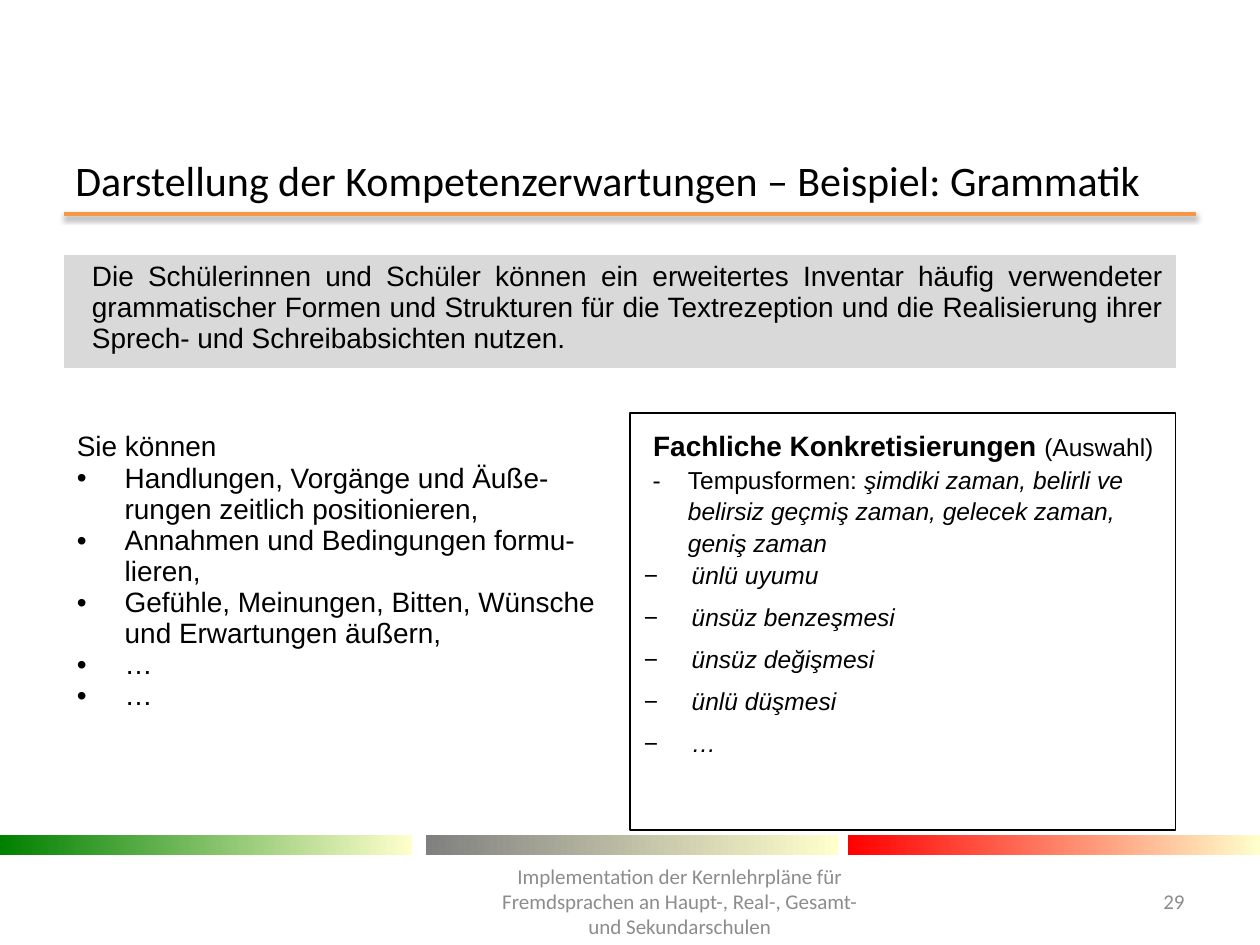
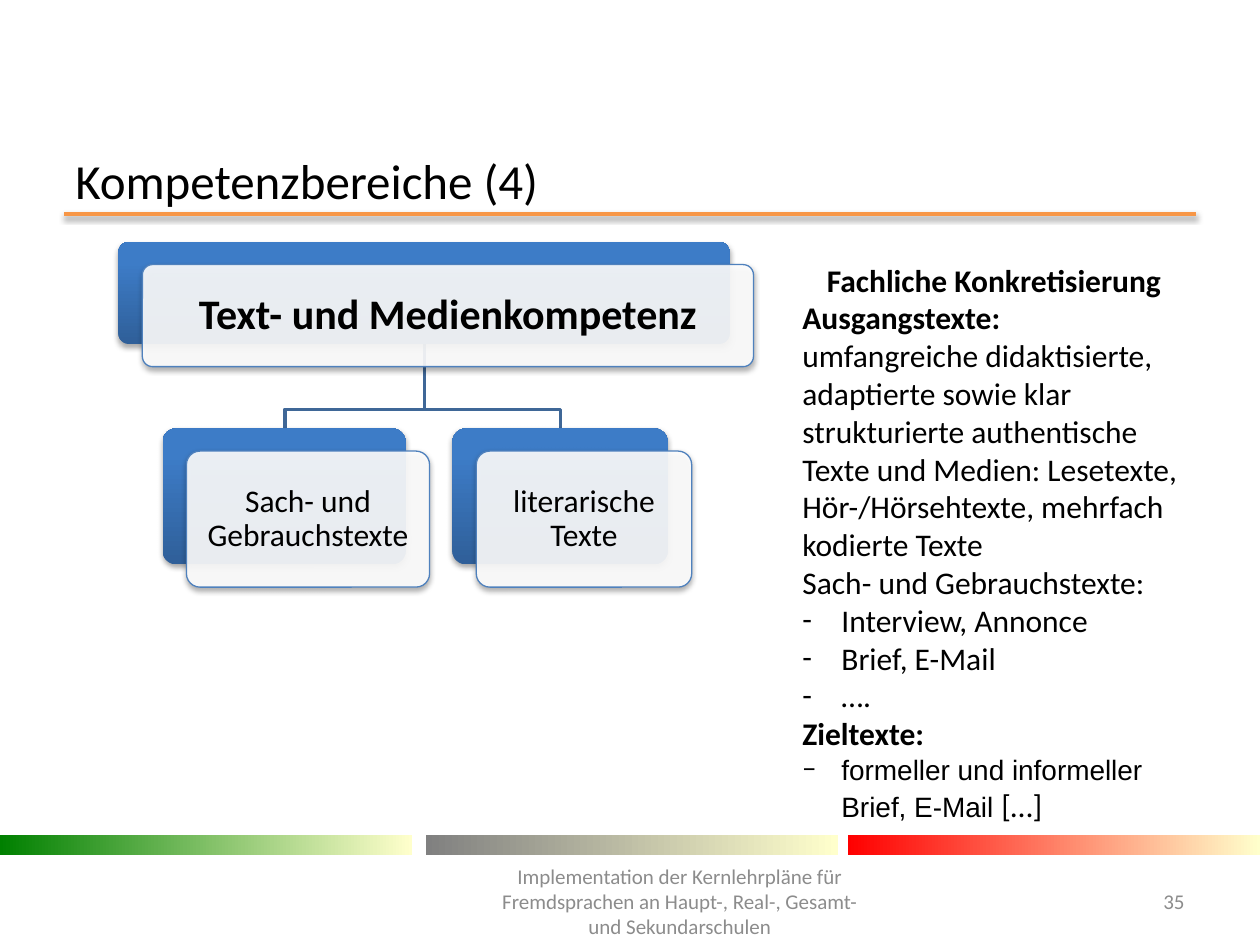
from lxml.etree import SubElement
from pptx import Presentation
from pptx.dml.color import RGBColor
from pptx.enum.shapes import MSO_CONNECTOR, MSO_SHAPE
from pptx.enum.text import MSO_ANCHOR, PP_ALIGN
from pptx.oxml.ns import qn
from pptx.util import Emu, Pt

PX = 9144  # 100 px to the inch
BLACK, WHITE, GREY = "000000", "FFFFFF", "8C8C8C"
ORANGE, CELL_GREY = "F79646", "D9D9D9"
NODE_DARK, NODE_LIGHT, NODE_EDGE, BRANCH = "2F5F99", "3D7CC7", "4F81BD", "3F6797"
BANDS = [(0, "008000"), (338, "808080"), (673, "FF0000")]
BAND_END = "FFFFCC"
NO_GRID_STYLE = "{2D5ABB26-0587-4C30-8999-92F81FD0307C}"
FOOTER = ("Implementation der Kernlehrpläne für Fremdsprachen an "
          "Haupt-, Real-, Gesamt- und Sekundarschulen")
LEFT, CENTER = PP_ALIGN.LEFT, PP_ALIGN.CENTER
RIGHT, JUSTIFY = PP_ALIGN.RIGHT, PP_ALIGN.JUSTIFY
MIDDLE, TOP = MSO_ANCHOR.MIDDLE, MSO_ANCHOR.TOP


def px(*values):
    return [Emu(v * PX) for v in values]


def rgb(code):
    return RGBColor.from_string(code)


def put(obj, **fmt):
    for name, value in fmt.items():
        setattr(obj, name, value)


def para(*runs, bullet=None, indent=(0, 0), **fmt):
    """Describe a paragraph; each run is a text or a (text, font dict) pair."""
    pairs = [(r, {}) if isinstance(r, str) else r for r in runs]
    return pairs, bullet, indent, fmt


class Deck:
    def __init__(self):
        self.prs = Presentation()
        put(self.prs, slide_width=Emu(1000 * PX), slide_height=Emu(750 * PX))
        self.s = None

    def slide(self, title, size, number):
        self.s = self.prs.slides.add_slide(self.prs.slide_layouts[6])
        self.line(51, 170, 949, 170, ORANGE, 2, shadow=38)
        for x, color in BANDS:
            self.shape((x, 663, 327, 16), gradient=(color, BAND_END, 1, 0))
        self.text((50, 123, 900, 39), [para(title)], anchor=MIDDLE, size=size)
        small = dict(anchor=MIDDLE, size=12, color=GREY)
        self.text((382, 695, 315, 40), [para(FOOTER, alignment=CENTER)], **small)
        self.text((886, 695, 64, 40), [para(number, alignment=RIGHT)], **small)

    def effects(self, sp, shadow):
        """Replace the theme effects by a soft shadow of that opacity, or by none."""
        effects = SubElement(sp._element.spPr, qn("a:effectLst"))
        if shadow:
            outer = SubElement(effects, qn("a:outerShdw"), blurRad="40000",
                               dist="21000", dir="5400000", rotWithShape="0")
            color = SubElement(outer, qn("a:srgbClr"), val=BLACK)
            SubElement(color, qn("a:alpha"), val=str(shadow * 1000))

    def stroke(self, sp, color, width):
        if color:
            sp.line.color.rgb = rgb(color)
            sp.line.width = Pt(width)
        else:
            sp.line.fill.background()

    def line(self, x1, y1, x2, y2, color, width, shadow=None):
        c = self.s.shapes.add_connector(MSO_CONNECTOR.STRAIGHT, *px(x1, y1, x2, y2))
        self.stroke(c, color, width)
        self.effects(c, shadow)

    def branch(self, points):
        pts = [px(*point) for point in points]
        builder = self.s.shapes.build_freeform(*pts[0])
        builder.add_line_segments(pts[1:], close=False)
        sp = builder.convert_to_shape()
        sp.fill.background()
        self.stroke(sp, BRANCH, 2)
        self.effects(sp, None)

    def shape(self, box, kind=MSO_SHAPE.RECTANGLE, fill=None, opacity=100,
              gradient=None, edge=None, width=1, shadow=None):
        """Gradient is (start colour, end colour, end position, angle)."""
        sp = self.s.shapes.add_shape(kind, *px(*box))
        if kind == MSO_SHAPE.ROUNDED_RECTANGLE:
            sp.adjustments[0] = 0.1
        if gradient:
            start, end, position, angle = gradient
            sp.fill.gradient()
            sp.fill.gradient_angle = angle
            for stop, color, at in zip(sp.fill.gradient_stops, (start, end), (0, position)):
                stop.color.rgb = rgb(color)
                stop.position = at
        elif fill:
            sp.fill.solid()
            sp.fill.fore_color.rgb = rgb(fill)
            if opacity < 100:
                color = sp._element.spPr.find(".//" + qn("a:srgbClr"))
                SubElement(color, qn("a:alpha"), val=str(opacity * 1000))
        else:
            sp.fill.background()
        self.stroke(sp, edge, width)
        self.effects(sp, shadow)
        return sp

    def node(self, x, y, w, h, label, size, bold=False):
        """Draw a blue card with a pale labelled card shifted over it."""
        rounded = MSO_SHAPE.ROUNDED_RECTANGLE
        self.shape((x, y, w, h), rounded, shadow=35,
                   gradient=(NODE_DARK, NODE_LIGHT, 0.8, 90))
        front = self.shape((x + 19, y + 18, w, h), rounded, fill=WHITE, opacity=90,
                           edge=NODE_EDGE, width=0.75, shadow=35)
        self.fill_text(front.text_frame, [para(label, alignment=CENTER, line_spacing=0.9)],
                       anchor=MIDDLE, size=size, bold=bold)

    def text(self, box, paras, **style):
        self.fill_text(self.s.shapes.add_textbox(*px(*box)).text_frame, paras, **style)

    def fill_text(self, tf, paras, anchor=TOP, size=18, color=BLACK, name="Calibri",
                  bold=False):
        put(tf, word_wrap=True, vertical_anchor=anchor)
        for i, (runs, bullet, (margin, first), fmt) in enumerate(paras):
            p = tf.paragraphs[0] if i == 0 else tf.add_paragraph()
            pPr = p._p.get_or_add_pPr()
            pPr.set("marL", str(margin * PX))
            pPr.set("indent", str(first * PX))
            if bullet:
                SubElement(pPr, qn("a:buFont"), typeface=name)
                SubElement(pPr, qn("a:buChar"), char=bullet)
            put(p, **{"alignment": LEFT, **fmt})
            for content, font in runs:
                r = p.add_run()
                r.text = content
                font = dict(size=size, name=name, bold=bold) | font
                put(r.font, **font | {"size": Pt(font["size"])})
                r.font.color.rgb = rgb(color)

    def table(self, box, cols, rows):
        tbl = self.s.shapes.add_table(len(rows), len(cols), *px(*box)).table
        put(tbl, first_row=False, horz_banding=False)
        tbl._tbl.tblPr.find(qn("a:tableStyleId")).text = NO_GRID_STYLE
        for col, w in zip(tbl.columns, cols):
            col.width = Emu(w * PX)
        for row, h in zip(tbl.rows, rows):
            row.height = Emu(h * PX)
        return tbl

    def cell(self, cell, paras=(), fill=None, **style):
        if fill:
            cell.fill.solid()
            cell.fill.fore_color.rgb = rgb(fill)
        else:
            cell.fill.background()
        self.fill_text(cell.text_frame, paras, name="Arial", **style)


def grammar_slide(deck):
    deck.slide("Darstellung der Kompetenzerwartungen – Beispiel: Grammatik", 24, "29")
    tbl = deck.table((51, 202, 882, 493), (450, 432), (84, 42, 367))
    for row in range(2):
        tbl.cell(row, 0).merge(tbl.cell(row, 1))
    deck.cell(tbl.cell(0, 0), [para(
        "Die Schülerinnen und Schüler können ein erweitertes Inventar häufig verwendeter "
        "grammatischer Formen und Strukturen für die Textrezeption und die Realisierung "
        "ihrer Sprech- und Schreibabsichten nutzen.",
        alignment=JUSTIFY, indent=(12, 0))], fill=CELL_GREY, size=16)
    deck.cell(tbl.cell(1, 0), fill=WHITE)

    skills = ["Handlungen, Vorgänge und Äuße-rungen zeitlich positionieren,",
              "Annahmen und Bedingungen formu-lieren,",
              "Gefühle, Meinungen, Bitten, Wünsche und Erwartungen äußern,", "…", "…"]
    deck.cell(tbl.cell(2, 0), [para("Sie können", line_spacing=1.15)] + [
        para(skill, bullet="•", indent=(38, -38)) for skill in skills], size=16)

    italic = dict(italic=True)
    topics = ["ünlü uyumu", "ünsüz benzeşmesi", "ünsüz değişmesi", "ünlü düşmesi", "…"]
    deck.cell(tbl.cell(2, 1), [
        para(("Fachliche Konkretisierungen ", dict(size=16, bold=True)), "(Auswahl)",
             alignment=CENTER, line_spacing=1.15),
        para("Tempusformen: ",
             ("şimdiki zaman, belirli ve belirsiz geçmiş zaman, gelecek zaman, geniş zaman",
              italic), bullet="-", indent=(35, -28), line_spacing=1.15),
    ] + [para((topic, italic), bullet="−", indent=(38, -38), line_spacing=1.15,
              space_after=Pt(6)) for topic in topics], size=14)
    deck.shape((500, 328, 433, 331), edge=BLACK)


def competence_slide(deck):
    deck.slide("Kompetenzbereiche (4)", 28, "35")
    for x in (445, 226):
        deck.branch([(337, 272), (337, 325), (x, 325), (x, 340)])
    deck.node(94, 192, 485, 81, "Text- und Medienkompetenz", 24, bold=True)
    deck.node(129, 340, 193, 108, "Sach- und Gebrauchstexte", 18)
    deck.node(359, 340, 171, 108, "literarische Texte", 18)

    bold = dict(bold=True)
    hanging = (31, -31)
    deck.text((627, 202, 324, 464), [
        para(("Fachliche Konkretisierung", bold), alignment=CENTER),
        para(("Ausgangstexte:", bold)),
        para("umfangreiche didaktisierte, adaptierte sowie klar strukturierte authentische "
             "Texte und Medien: Lesetexte, Hör-/Hörsehtexte, mehrfach kodierte Texte"),
        para("Sach- und Gebrauchstexte:"),
        *[para(kind, bullet="-", indent=hanging)
          for kind in ("Interview, Annonce", "Brief, E-Mail", "….")],
        para(("Zieltexte:", bold)),
        para(("formeller und informeller Brief, E-Mail ", dict(size=16, name="Arial")),
             "[…]", bullet="−", indent=hanging),
    ])


def main():
    deck = Deck()
    grammar_slide(deck)
    competence_slide(deck)
    deck.prs.save("out.pptx")


if __name__ == "__main__":
    main()
